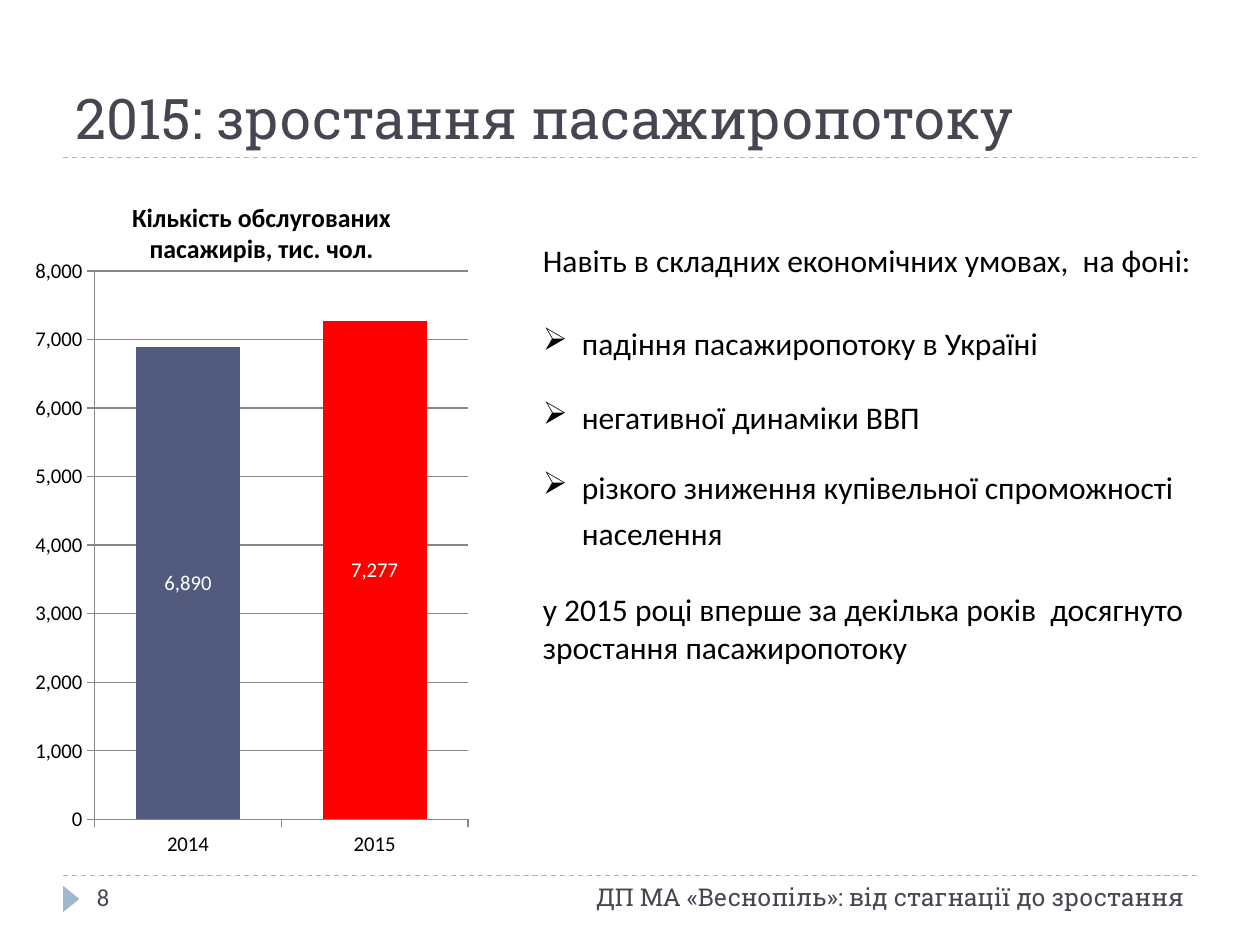
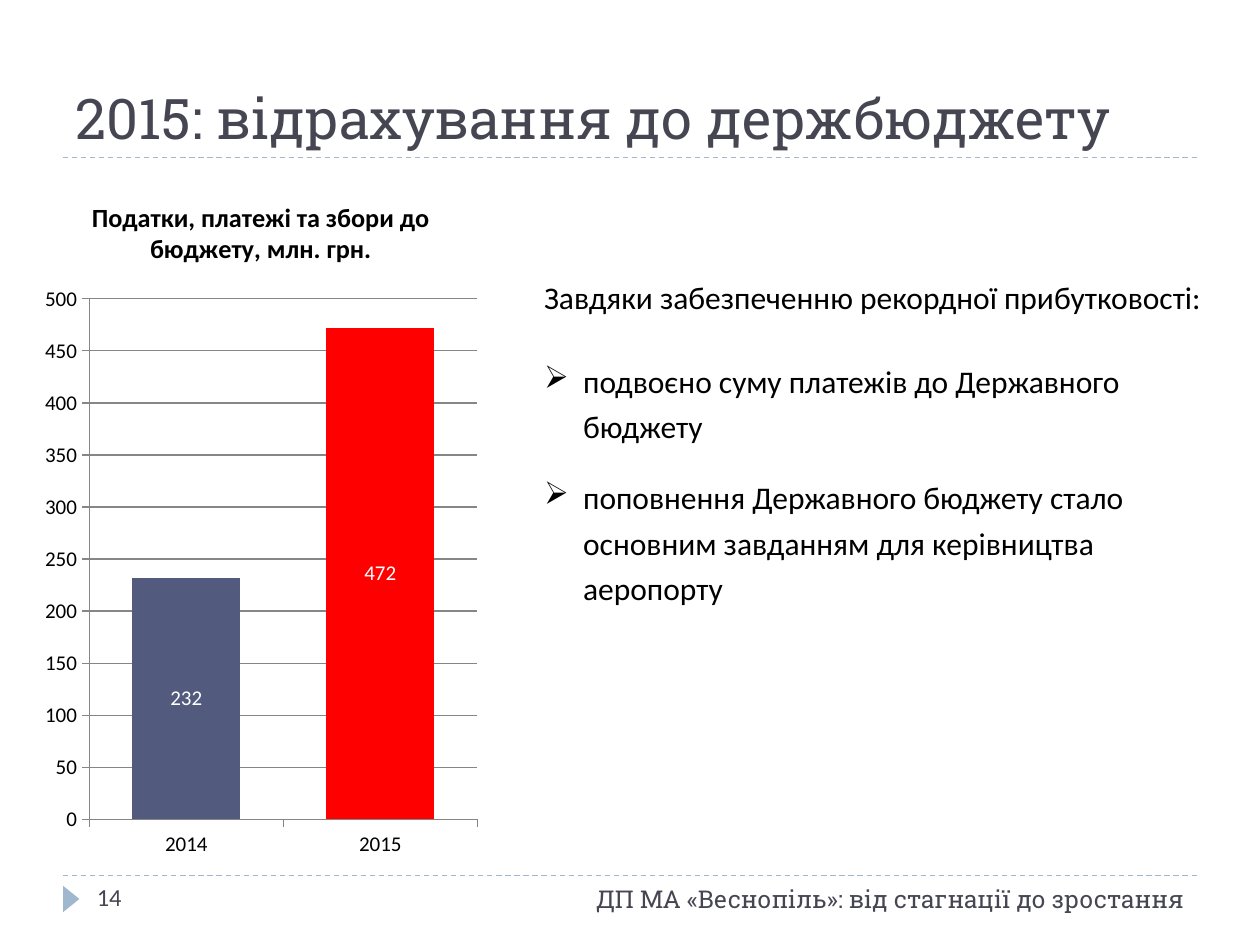
from lxml import etree
from pptx import Presentation
from pptx.chart.data import CategoryChartData as ChartData
from pptx.dml.color import RGBColor as Color
from pptx.enum.chart import XL_CHART_TYPE as ChartType, XL_LABEL_POSITION as LabelPos
from pptx.enum.chart import XL_TICK_MARK as Tick
from pptx.enum.dml import MSO_LINE as Dash
from pptx.enum.shapes import MSO_CONNECTOR as Connector, MSO_SHAPE as Shape
from pptx.enum.text import MSO_ANCHOR as Anchor, MSO_AUTO_SIZE as AutoSize, PP_ALIGN as Align
from pptx.oxml.ns import qn
from pptx.util import Pt

SCALE = 9144  # EMU per px, 100 px to the inch
COLORS = {"ink": "464653", "text": "000000", "accent": "9FB8CD", "grid": "868686",
          "before": "525B7E", "after": "FF0000", "label": "FFFFFF"}
HEAD_FONT, BODY_FONT = "Roboto Slab", "Calibri"
FOOTER = "ДП МА «Веснопіль»: від стагнації до зростання"
YEARS = ("2014", "2015")
BULLET_INDENT = 31


def px(*lengths):
    return [round(length * SCALE) for length in lengths]


def style_font(font, size, color="text", name=BODY_FONT, bold=False):
    font.size, font.name, font.bold = Pt(size), name, bold
    font.color.rgb = Color.from_string(COLORS[color])


class Deck:
    """Holds the shared style and the current page."""

    def __init__(self):
        self.deck = Presentation()
        self.deck.slide_width, self.deck.slide_height = px(1000, 750)
        self.page = None

    def add_page(self, title, number, footer_top=695):
        self.page = self.deck.slides.add_slide(self.deck.slide_layouts[5])
        for top in (695, 125):
            self.rule(top)
        self.marker()
        self.title(title)
        self.text(number, 67, 695, 217, 40, BODY_FONT)
        self.text(FOOTER, 317, footer_top, 633, 40, HEAD_FONT, Align.RIGHT)

    def title(self, words):
        box = self.page.shapes.title
        box.left, box.top, box.width, box.height = px(50, 17, 900, 108)
        frame = box.text_frame
        frame.auto_size, frame.vertical_anchor = AutoSize.NONE, Anchor.BOTTOM
        para = frame.paragraphs[0]
        para.alignment = Align.LEFT
        self.span(para, words, 32, "ink", HEAD_FONT)

    def span(self, para, words, size, color="text", name=BODY_FONT):
        span = para.add_run()
        span.text = words
        style_font(span.font, size, color, name)

    def rule(self, top):
        line = self.page.shapes.add_connector(Connector.STRAIGHT, *px(50, top, 950, top))
        line.line.color.rgb = Color.from_string(COLORS["accent"])
        line.line.width, line.line.dash_style = Pt(0.75), Dash.DASH
        etree.SubElement(line.element.spPr, qn("a:effectLst"))

    def marker(self):
        arrow = self.page.shapes.add_shape(Shape.ISOSCELES_TRIANGLE, *px(46, 707, 21, 13))
        arrow.rotation = 90
        arrow.shadow.inherit = False
        arrow.fill.solid()
        arrow.fill.fore_color.rgb = Color.from_string(COLORS["accent"])
        arrow.line.fill.background()

    def frame(self, left, top, width, height):
        box = self.page.shapes.add_textbox(*px(left, top, width, height))
        box.text_frame.word_wrap = True
        return box.text_frame

    def text(self, words, left, top, width, height, font, align=Align.LEFT):
        para = self.frame(left, top, width, height).paragraphs[0]
        para.alignment = align
        self.span(para, words, 14, "ink", font)

    def body(self, items, left, top, width, height):
        """Items are (words, is bullet, points of space before)."""
        frame = self.frame(left, top, width, height)
        for index, (words, bullet, gap) in enumerate(items):
            para = frame.add_paragraph() if index else frame.paragraphs[0]
            para.space_before = Pt(gap)
            if bullet:
                self.bullet(para)
            self.span(para, words, 18)

    def bullet(self, para):
        para.line_spacing = 1.2
        props = para._p.get_or_add_pPr()
        indent, = px(BULLET_INDENT)
        props.set("marL", str(indent))
        props.set("indent", str(-indent))
        etree.SubElement(props, qn("a:buChar"), char="➢")

    def column_chart(self, title, values, kind, width, top_value, step, number_format, plot_area):
        data = ChartData(number_format=number_format)
        data.categories = YEARS
        data.add_series("Series 1", values)
        chart = self.page.shapes.add_chart(kind, *px(28, 138, width, 551), data).chart
        style_font(chart.font, 10)
        chart.has_legend = False
        chart.has_title = True
        para = chart.chart_title.text_frame.paragraphs[0]
        self.span(para, title, 15)
        para.runs[0].font.bold = True
        chart.chart_title.include_in_layout = False

        # Axes
        for axis in (chart.category_axis, chart.value_axis):
            style_font(axis.tick_labels.font, 12)
            axis.major_tick_mark = Tick.OUTSIDE
            axis.format.line.color.rgb = Color.from_string(COLORS["grid"])
        axis = chart.value_axis
        axis.minimum_scale, axis.maximum_scale, axis.major_unit = 0, top_value, step
        axis.tick_labels.number_format = number_format
        axis.tick_labels.number_format_is_linked = False
        axis.major_gridlines.format.line.color.rgb = Color.from_string(COLORS["grid"])

        # Columns and labels
        plot = chart.plots[0]
        plot.gap_width, plot.vary_by_categories = 80, False
        for index, color in enumerate(("before", "after")):
            fill = plot.series[0].points[index].format.fill
            fill.solid()
            fill.fore_color.rgb = Color.from_string(COLORS[color])
        plot.has_data_labels = True
        labels = plot.data_labels
        labels.show_value, labels.position = True, LabelPos.CENTER
        labels.number_format, labels.number_format_is_linked = number_format, False
        style_font(labels.font, 12, "label")
        self.place_plot(chart, plot_area)

    def place_plot(self, chart, fractions):
        area = chart.element.find(".//" + qn("c:plotArea"))
        for old in area.findall(qn("c:layout")):
            area.remove(old)
        layout = etree.Element(qn("c:layout"))
        area.insert(0, layout)
        manual = etree.SubElement(layout, qn("c:manualLayout"))
        settings = [("layoutTarget", "inner"), ("xMode", "edge"), ("yMode", "edge"),
                    *zip("xywh", fractions)]
        for tag, value in settings:
            etree.SubElement(manual, qn("c:" + tag), val=str(value))


def main():
    show = Deck()

    # Passenger traffic
    show.add_page("2015: зростання пасажиропотоку", "8")
    show.column_chart("Кількість обслугованих пасажирів, тис. чол.", (6890, 7277),
                      ChartType.COLUMN_CLUSTERED, 354, 8000, 1000, "#,##0",
                      (0.12, 0.14, 0.85, 0.79))
    show.body([
        ("Навіть в складних економічних умовах,  на фоні:", False, 0),
        ("падіння пасажиропотоку в Україні", True, 22),
        ("негативної динаміки ВВП", True, 16),
        ("різкого зниження купівельної спроможності населення", True, 14.5),
        ("у 2015 році вперше за декілька років  досягнуто зростання пасажиропотоку", False, 22),
    ], 421, 186, 551, 349)

    # Payments to the state budget
    show.add_page("2015: відрахування до держбюджету", "14", footer_top=697)
    show.column_chart("Податки, платежі та збори до бюджету, млн. грн.", (232, 472),
                      ChartType.COLUMN_STACKED, 358, 500, 50, "0",
                      (0.12, 0.18, 0.86, 0.75))
    show.body([
        ("Завдяки забезпеченню рекордної прибутковості:", False, 0),
        ("подвоєно суму платежів до Державного бюджету", True, 22),
        ("поповнення Державного бюджету стало основним завданням для керівництва аеропорту",
         True, 14.5),
    ], 422, 216, 550, 273)

    show.deck.save("out.pptx")


if __name__ == "__main__":
    main()
